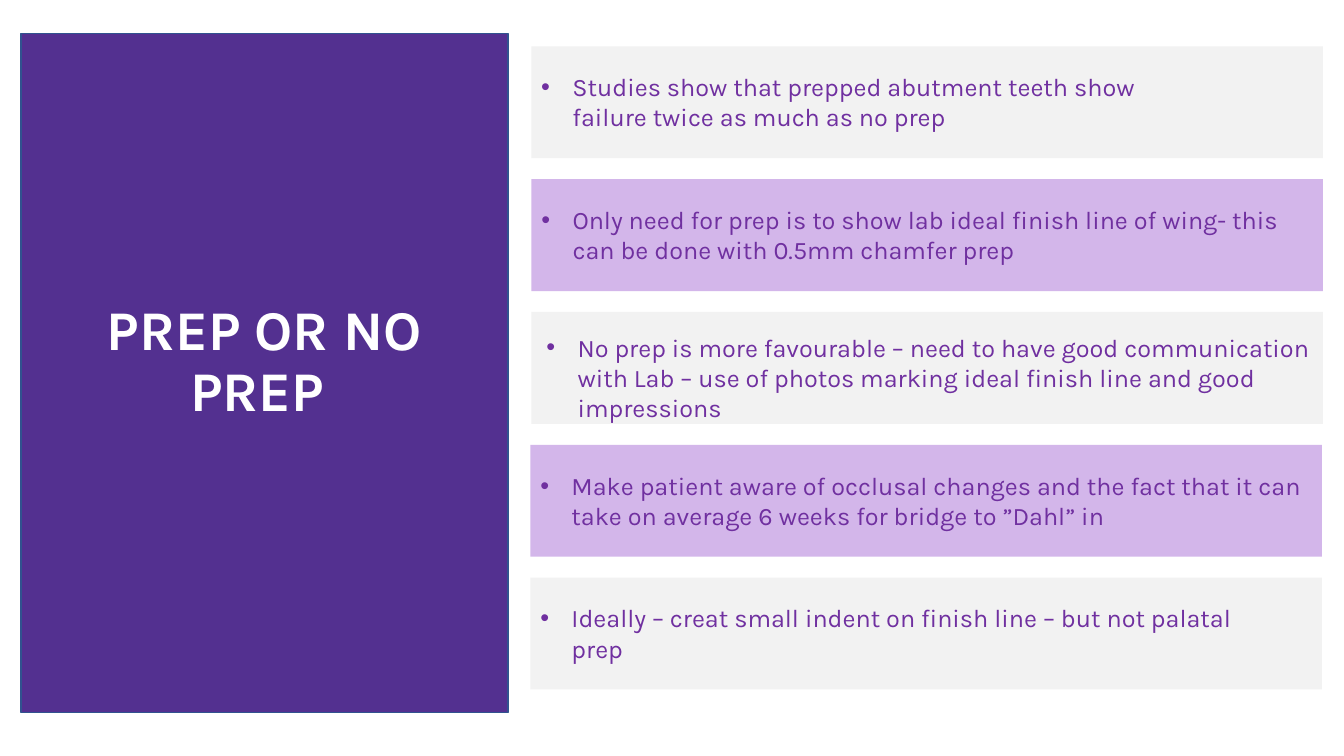
from lxml import etree
from pptx import Presentation, util as u
from pptx.dml.color import RGBColor
from pptx.enum import shapes, text
from pptx.oxml.ns import qn


def paint(color, code):
    color.rgb = RGBColor.from_string(code)


def write(frame, words, size=18, color="7030A0", bold=False, align=text.PP_ALIGN.LEFT,
          anchor=text.MSO_ANCHOR.TOP, pad=0.05, space=1.0, bullet=False):
    frame.word_wrap = True
    frame.auto_size = text.MSO_AUTO_SIZE.NONE
    frame.vertical_anchor = anchor
    frame.margin_left = frame.margin_right = u.Inches(0.1)
    frame.margin_top = frame.margin_bottom = u.Inches(pad)
    para = frame.paragraphs[0]
    para.alignment = align
    para.line_spacing = space
    para.space_before = u.Pt(0)
    run = para.add_run()
    run.text = words
    run.font.name = "Karla"
    run.font.size = u.Pt(size)
    run.font.bold = bold
    paint(run.font.color, color)
    if bullet:
        props = para._p.get_or_add_pPr()
        props.set("marL", str(u.Inches(0.31)))
        props.set("indent", str(u.Inches(-0.31)))
        etree.SubElement(props, qn("a:buFont")).set("typeface", "Arial")
        etree.SubElement(props, qn("a:buChar")).set("char", "•")


class Deck:
    """Holds the slide and draws its elements in one style."""

    def __init__(self):
        self.show = Presentation()
        self.show.slide_width = u.Inches(13.33)
        self.show.slide_height = u.Inches(7.5)
        self.slide = self.show.slides.add_slide(self.show.slide_layouts[5])

    def block(self, left, top, width, height, fill, line=None):
        box = self.slide.shapes.add_shape(
            shapes.MSO_SHAPE.RECTANGLE, *map(u.Inches, (left, top, width, height)))
        box.shadow.inherit = False
        box.fill.solid()
        paint(box.fill.fore_color, fill)
        if line:
            paint(box.line.color, line)
            box.line.width = u.Pt(1)
        else:
            box.line.fill.background()
        return box

    def title(self, left, top, width, height, words):
        head = self.slide.shapes.title
        head.left, head.top, head.width, head.height = map(
            u.Inches, (left, top, width, height))
        write(head.text_frame, words, size=40, color="FFFFFF", bold=True,
              align=text.PP_ALIGN.CENTER, space=0.9)
        tree = self.slide.shapes._spTree
        tree.remove(head._element)
        tree.append(head._element)

    def label(self, left, top, width, height, words):
        box = self.slide.shapes.add_textbox(*map(u.Inches, (left, top, width, height)))
        write(box.text_frame, words, bullet=True)


POINTS = [
    (5.27, 5.27, 6.86, 0.71, "Studies show that prepped abutment teeth show failure twice as much as no prep"),
    (5.27, 5.27, 7.59, 0.71, "Only need for prep is to show lab ideal finish line of wing- this can be done with 0.5mm chamfer prep"),
    (5.27, 5.32, 7.79, 1.01, "No prep is more favourable – need to have good communication with Lab – use of photos marking ideal finish line and good impressions"),
    (5.26, None, None, None, "Make patient aware of occlusal changes and the fact that it can take on average 6 weeks for bridge to ”Dahl” in"),
    (5.26, 5.26, 7.41, 0.71, "Ideally – creat small indent on finish line – but not palatal prep"),
]
FILLS = ["F2F2F2", "D3B6EA"]
FIRST, LAST = 0.46, 5.73


def main():
    deck = Deck()
    deck.block(0.21, 0.33, 4.83, 6.74, "533090", line="31538F")
    deck.title(0.43, 2.95, 4.38, 1.59, "PREP OR NO PREP ")
    step = (LAST - FIRST) / (len(POINTS) - 1)
    for row, (edge, left, width, height, words) in enumerate(POINTS):
        top = FIRST + row * step
        band = deck.block(edge, top, 7.85, 1.11, FILLS[row % 2])
        if left is None:
            write(band.text_frame, words, anchor=text.MSO_ANCHOR.MIDDLE, pad=0.1, bullet=True)
        else:
            inset = 0.2 if height < 1 else 0.15
            deck.label(left, top + inset, width, height, words)
    deck.show.save("out.pptx")


if __name__ == "__main__":
    main()
